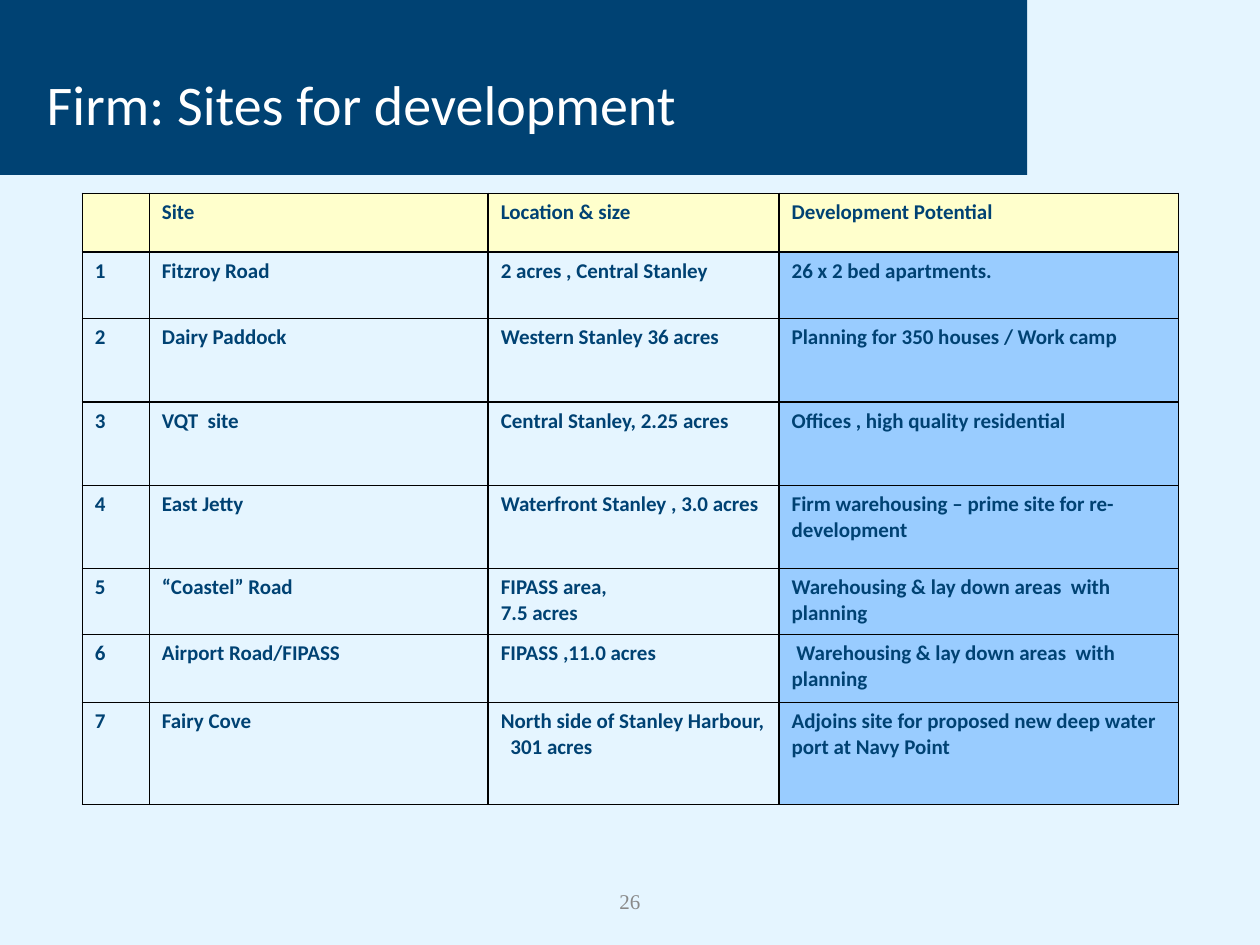
from lxml.etree import SubElement
from pptx import Presentation
from pptx.dml.color import RGBColor
from pptx.enum.shapes import MSO_SHAPE as Shape
from pptx.enum.text import MSO_ANCHOR as Anchor, PP_ALIGN as Align
from pptx.oxml.ns import qn
from pptx.util import Pt

NAVY = RGBColor(0x00, 0x42, 0x73)
WHITE = RGBColor(0xFF, 0xFF, 0xFF)
PALE_BLUE = RGBColor(0xE5, 0xF5, 0xFF)
SKY_BLUE = RGBColor(0x99, 0xCC, 0xFF)
CREAM = RGBColor(0xFF, 0xFF, 0xCC)
GREY = RGBColor(0x89, 0x89, 0x89)

COLUMN_WIDTHS = [38.3, 193.7, 166.2, 228.2]
ROW_HEIGHTS = [33.5, 38, 47.7, 47.7, 47.7, 37.7, 38.7, 58.5]
HEADINGS = ["", "Site", "Location & size", "Development Potential"]
SITES = [
    ("Fitzroy Road", "2 acres , Central Stanley", "26 x 2 bed apartments."),
    ("Dairy Paddock", "Western Stanley 36 acres", "Planning for 350 houses / Work camp"),
    ("VQT  site", "Central Stanley, 2.25 acres", "Offices , high quality residential"),
    ("East Jetty", "Waterfront Stanley , 3.0 acres",
     "Firm warehousing – prime site for re-development"),
    ("“Coastel” Road", "FIPASS area,\n7.5 acres",
     "Warehousing & lay down areas  with planning"),
    ("Airport Road/FIPASS", "FIPASS ,11.0 acres",
     " Warehousing & lay down areas  with planning"),
    ("Fairy Cove", "North side of Stanley Harbour,\n301 acres",
     "Adjoins site for proposed new deep water port at Navy Point"),
]


def set_font(para, name, size, color, bold=False):
    font = para.font
    font.name, font.size, font.bold = name, Pt(size), bold
    font.color.rgb = color


def add_borders(cell):
    """Draw a 1 pt black line on all four sides; call before filling the cell."""
    properties = cell._tc.get_or_add_tcPr()
    for side in ("a:lnL", "a:lnR", "a:lnT", "a:lnB"):
        line = SubElement(properties, qn(side), w=str(Pt(1)))
        fill = SubElement(line, qn("a:solidFill"))
        SubElement(fill, qn("a:srgbClr"), val="000000")


deck = Presentation()
deck.slide_width, deck.slide_height = Pt(720), Pt(540)
page = deck.slides.add_slide(deck.slide_layouts[5])
page.background.fill.solid()
page.background.fill.fore_color.rgb = PALE_BLUE

# Header bar, with the title in front of it
bar = page.shapes.add_shape(Shape.RECTANGLE, Pt(-0.5), Pt(-0.5), Pt(587.5), Pt(100.5))
bar.shadow.inherit = False
bar.fill.solid()
bar.fill.fore_color.rgb = NAVY
bar.line.fill.background()

title = page.shapes.title
bar.element.addnext(title.element)
title.left, title.top, title.width, title.height = Pt(19.5), Pt(8), Pt(587.5), Pt(102)
title.text_frame.text = "Firm: Sites for development"
title.text_frame.vertical_anchor = Anchor.MIDDLE
title.text_frame.paragraphs[0].alignment = Align.LEFT
set_font(title.text_frame.paragraphs[0], "Calibri", 32, WHITE)

# Table of sites
rows = [HEADINGS] + [(str(number), *site) for number, site in enumerate(SITES, 1)]
table = page.shapes.add_table(
    len(rows), len(HEADINGS), Pt(47), Pt(110.5),
    Pt(sum(COLUMN_WIDTHS)), Pt(sum(ROW_HEIGHTS))).table
table.first_row = table.horz_banding = False
for column, width in zip(table.columns, COLUMN_WIDTHS):
    column.width = Pt(width)
for row, height in zip(table.rows, ROW_HEIGHTS):
    row.height = Pt(height)

for row_index, texts in enumerate(rows):
    for column_index, text in enumerate(texts):
        cell = table.cell(row_index, column_index)
        add_borders(cell)
        if row_index == 0:
            cell.fill.solid()
            cell.fill.fore_color.rgb = CREAM
        elif column_index == 3:
            cell.fill.solid()
            cell.fill.fore_color.rgb = SKY_BLUE
        else:
            cell.fill.background()
        cell.text = text
        for para in cell.text_frame.paragraphs:
            set_font(para, "Calibri", 12, NAVY, bold=True)

# The last site's size is slightly indented
size_para = table.cell(7, 2).text_frame.paragraphs[1]
size_para._p.get_or_add_pPr().set("marL", str(Pt(5.5)))

# Page number
box = page.shapes.add_textbox(Pt(246), Pt(500.5), Pt(228), Pt(29))
box.text_frame.word_wrap = True
box.text_frame.vertical_anchor = Anchor.MIDDLE
box.text_frame.text = "26"
box.text_frame.paragraphs[0].alignment = Align.CENTER
set_font(box.text_frame.paragraphs[0], "Times New Roman", 12, GREY)

deck.save("out.pptx")
